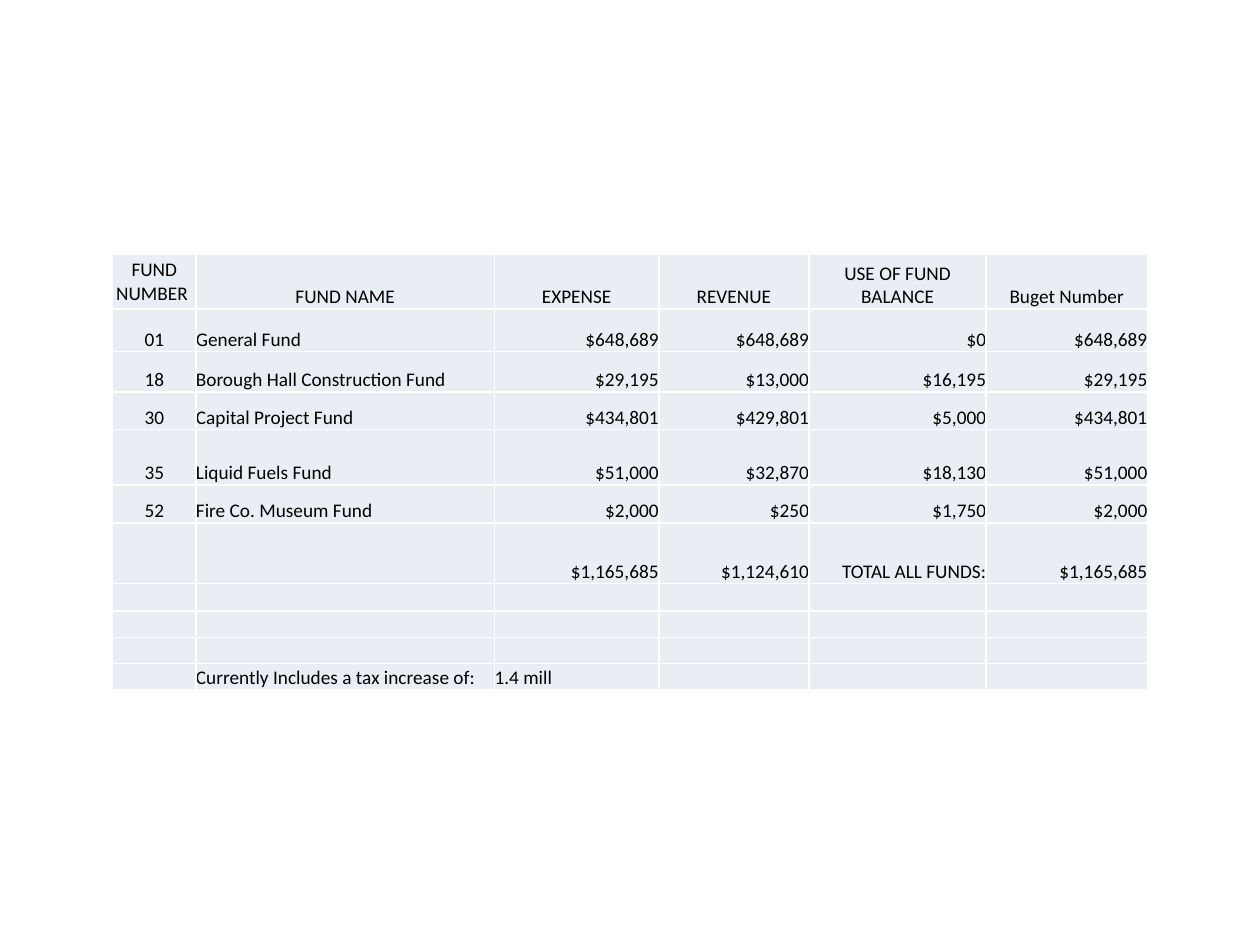
from lxml.etree import SubElement
from pptx import Presentation
from pptx.dml.color import RGBColor
from pptx.enum.text import MSO_ANCHOR, PP_ALIGN
from pptx.oxml.ns import qn
from pptx.util import Cm, Pt

SIZE = 11
LEFT, TOP = 2.27, 5.13
WIDTHS = [1.68, 6.02, 3.31, 3.03, 3.57, 3.25]
HEIGHTS = [1.1, 0.86, 0.81, 0.76, 1.12, 0.76, 1.22, 0.56, 0.53, 0.53, 0.53]
BLANK = [""] * 6
ROWS = [
    ["FUND NUMBER ", "FUND NAME", "EXPENSE", "REVENUE", "USE OF FUND BALANCE", "Buget Number"],
    ["01", "General Fund", "$648,689", "$648,689", "$0", "$648,689"],
    ["18", "Borough Hall Construction Fund", "$29,195", "$13,000", "$16,195", "$29,195"],
    ["30", "Capital Project Fund", "$434,801", "$429,801", "$5,000", "$434,801"],
    ["35", "Liquid Fuels Fund", "$51,000", "$32,870", "$18,130", "$51,000"],
    ["52", "Fire Co. Museum Fund", "$2,000", "$250", "$1,750", "$2,000"],
    ["", "", "$1,165,685", "$1,124,610", "TOTAL ALL FUNDS:", "$1,165,685"],
    BLANK,
    BLANK,
    BLANK,
    ["", "Currently Includes a tax increase of:", "1.4 mill", "", "", ""],
]


def color(code):
    return RGBColor.from_string(code)


def align(row, col):
    if row == 0 or col == 0:
        return PP_ALIGN.CENTER
    if col == 1 or row == len(ROWS) - 1:
        return PP_ALIGN.LEFT
    return PP_ALIGN.RIGHT


def add_borders(cell, code):
    props = cell._tc.get_or_add_tcPr()
    for side in ("lnL", "lnR", "lnT", "lnB"):
        line = SubElement(props, qn(f"a:{side}"), w=str(Pt(1)))
        fill = SubElement(line, qn("a:solidFill"))
        SubElement(fill, qn("a:srgbClr"), val=code)


def fill_cell(cell, text, side, anchor):
    add_borders(cell, "FFFFFF")
    cell.fill.solid()
    cell.fill.fore_color.rgb = color("E9EDF4")
    cell.margin_left = cell.margin_right = cell.margin_top = cell.margin_bottom = 0
    cell.vertical_anchor = anchor
    para = cell.text_frame.paragraphs[0]
    para.alignment = side
    if not text:
        # Keeps an empty cell from growing its row
        SubElement(para._p, qn("a:endParaRPr"), sz=str(SIZE * 100))
        return
    para.text = text
    font = para.runs[0].font
    font.name, font.size, font.bold = "Calibri", Pt(SIZE), False
    font.color.rgb = color("000000")


def add_funds(slide):
    frame = slide.shapes.add_table(
        len(ROWS), len(WIDTHS), Cm(LEFT), Cm(TOP), Cm(sum(WIDTHS)), Cm(sum(HEIGHTS)))
    table = frame.table
    table.first_row = table.horz_banding = False
    for column, width in zip(table.columns, WIDTHS):
        column.width = Cm(width)
    for row, height in zip(table.rows, HEIGHTS):
        row.height = Cm(height)
    for r, texts in enumerate(ROWS):
        for c, text in enumerate(texts):
            anchor = MSO_ANCHOR.MIDDLE if r == c == 0 else MSO_ANCHOR.BOTTOM
            fill_cell(table.cell(r, c), text, align(r, c), anchor)


def main():
    deck = Presentation()
    deck.slide_width, deck.slide_height = Cm(25.4), Cm(19.05)
    slide = deck.slides.add_slide(deck.slide_layouts[6])
    add_funds(slide)
    deck.save("out.pptx")


if __name__ == "__main__":
    main()
